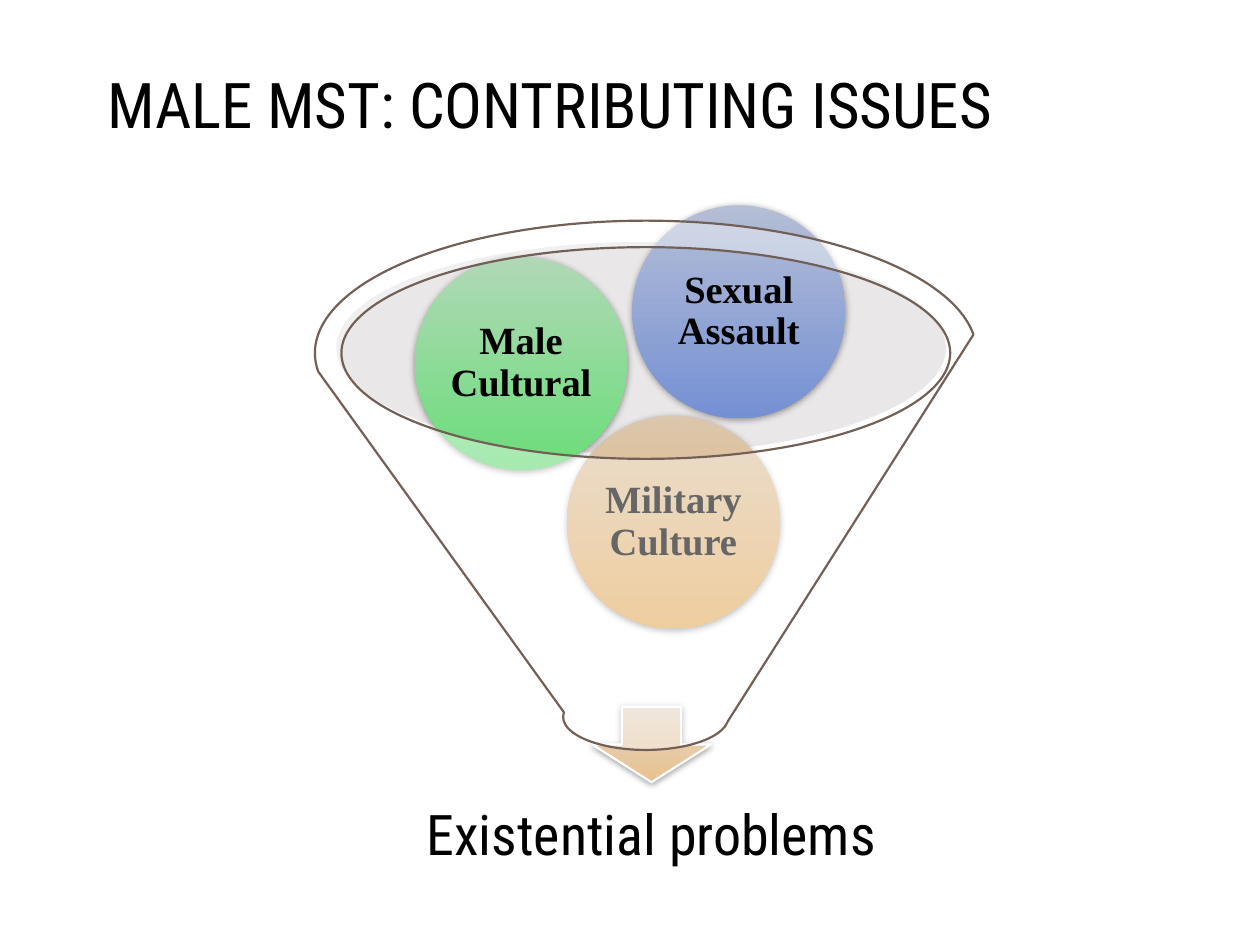
import pptx
import pptx.dml.color
import pptx.enum.shapes
import pptx.enum.text
import pptx.util
from lxml import etree
from pptx.oxml.ns import qn

Cm = pptx.util.Cm
Pt = pptx.util.Pt
SHAPES = pptx.enum.shapes.MSO_SHAPE
ALIGN = pptx.enum.text.PP_ALIGN
ANCHOR = pptx.enum.text.MSO_ANCHOR

SLIDE_SIZE = (25.4, 19.05)
TITLE = ("MALE MST: CONTRIBUTING ISSUES", (1.91, 0.64, 20.55, 2.34))
OUTCOME = ("Existential problems", (4.88, 15.47, 16.51, 2.84))
MOUTH_BOX = (6.78, 4.88, 12.29, 4.27)
ARROW_BOX = (11.94, 14.25, 2.39, 1.52)
FUNNEL_BOX = (6.35, 4.45, 13.34, 10.67)
ARROW_COLORS = ("E5D8C6", "E8C18F")
ISSUE_DIAMETER = 4.29
ISSUES = [
    ("Military Culture", (11.43, 8.38), ("DBC7AD", "E5AD60")),
    ("Male Cultural", (8.36, 5.18), ("B0D8B6", "6BDD7A")),
    ("Sexual Assault", (12.75, 4.14), ("B4BED5", "7590D4")),
]
TITLE_STYLE = {
    "frame": {"vertical_anchor": ANCHOR.BOTTOM},
    "paragraph": {"alignment": ALIGN.LEFT},
    "font": {"name": "Roboto Condensed", "size": Pt(36)},
}
OUTCOME_STYLE = {
    "frame": {"vertical_anchor": ANCHOR.MIDDLE},
    "paragraph": {"alignment": ALIGN.CENTER, "line_spacing": 0.9},
    "font": {"name": "Roboto Condensed", "size": Pt(32)},
    "inset": 0.64,
}
ISSUE_STYLE = {
    "frame": {"vertical_anchor": ANCHOR.MIDDLE},
    "paragraph": {"alignment": ALIGN.CENTER, "line_spacing": 0.9},
    "font": {"name": "Times New Roman", "size": Pt(22), "bold": True},
    "inset": 0.08,
}


def rgb(value):
    return pptx.dml.color.RGBColor.from_string(value)


def apply(target, values):
    for name, value in values.items():
        setattr(target, name, value)


def write(holder, words, style):
    frame = holder.text_frame
    frame.word_wrap = True
    apply(frame, style["frame"])
    if "inset" in style:
        sides = ("left", "top", "right", "bottom")
        apply(frame, {f"margin_{side}": Cm(style["inset"]) for side in sides})
    paragraph = frame.paragraphs[0]
    apply(paragraph, style["paragraph"])
    run = paragraph.add_run()
    run.text = words
    apply(run.font, style["font"])
    run.font.color.rgb = rgb("000000")


def add_caption(slide, words, box, style):
    write(slide.shapes.add_textbox(*map(Cm, box)), words, style)


def add_part(slide, preset, box, outline=None):
    part = slide.shapes.add_shape(preset, *map(Cm, box))
    part.shadow.inherit = False
    if outline:
        part.line.color.rgb = rgb(outline)
        part.line.width = Pt(1.25)
    else:
        part.line.fill.background()
    return part


def fill_translucent(part, color, percent):
    part.fill.solid()
    part.fill.fore_color.rgb = rgb(color)
    tint = part.fill._xPr.find(qn("a:solidFill"))[0]
    etree.SubElement(tint, qn("a:alpha"), val=str(percent * 1000))


def fill_shaded(part, colors):
    part.fill.gradient()
    part.fill.gradient_angle = 270
    for stop, color in zip(part.fill.gradient_stops, colors):
        stop.color.rgb = rgb(color)
    effects = part.fill._xPr.find(qn("a:effectLst"))
    shadow = etree.SubElement(
        effects, qn("a:outerShdw"), blurRad=str(Pt(4)), dist=str(Pt(1)),
        dir=str(88 * 60000), rotWithShape="0")
    tint = etree.SubElement(shadow, qn("a:srgbClr"), val="000000")
    etree.SubElement(tint, qn("a:alpha"), val="40000")


def main():
    deck = pptx.Presentation()
    deck.slide_width, deck.slide_height = map(Cm, SLIDE_SIZE)
    slide = deck.slides.add_slide(deck.slide_layouts[6])

    add_caption(slide, *TITLE, TITLE_STYLE)
    mouth = add_part(slide, SHAPES.OVAL, MOUTH_BOX)
    fill_translucent(mouth, "C9C5C3", 40)
    arrow = add_part(slide, SHAPES.DOWN_ARROW, ARROW_BOX, "FFFFFF")
    fill_shaded(arrow, ARROW_COLORS)
    add_caption(slide, *OUTCOME, OUTCOME_STYLE)

    for words, corner, colors in ISSUES:
        box = (*corner, ISSUE_DIAMETER, ISSUE_DIAMETER)
        issue = add_part(slide, SHAPES.OVAL, box)
        fill_shaded(issue, colors)
        write(issue, words, ISSUE_STYLE)

    funnel = add_part(slide, SHAPES.FUNNEL, FUNNEL_BOX, "726056")
    fill_translucent(funnel, "FFFFFF", 40)
    deck.save("out.pptx")


if __name__ == "__main__":
    main()
